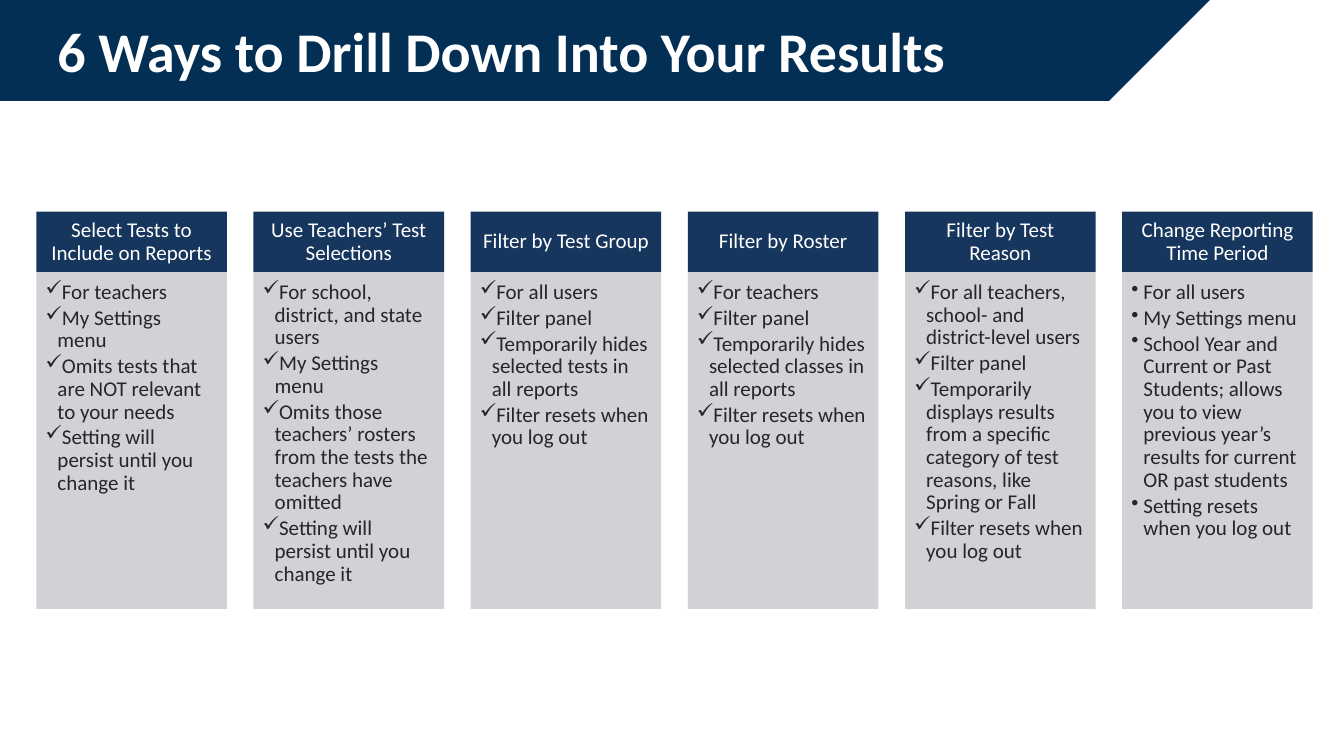
from dataclasses import dataclass

from lxml import etree
from pptx import Presentation
from pptx.dml.color import RGBColor
from pptx.enum.shapes import MSO_SHAPE
from pptx.enum.text import MSO_ANCHOR, MSO_AUTO_SIZE, PP_ALIGN
from pptx.oxml.ns import qn
from pptx.shapes.autoshape import Shape
from pptx.slide import Slide
from pptx.text.text import TextFrame
from pptx.util import Inches, Pt

RECTANGLE = MSO_SHAPE.RECTANGLE
TOP, MIDDLE = MSO_ANCHOR.TOP, MSO_ANCHOR.MIDDLE
LEFT, CENTER = PP_ALIGN.LEFT, PP_ALIGN.CENTER
NO_AUTOFIT = MSO_AUTO_SIZE.NONE
TITLE_ONLY = 5

FONT = "Calibri"
BANNER, HEADING, PANEL = "032F55", "17365D", "CCCED2"
WHITE, INK = "FFFFFF", "262626"

FIRST_LEFT, LAST_LEFT, WIDTH = 0.36, 11.13, 1.89
HEADING_TOP, HEADING_HEIGHT, PANEL_HEIGHT = 2.1, 0.6, 3.34


@dataclass(frozen=True)
class Way:
    heading: str
    points: tuple[str, ...]
    bullet: str = "✓"


WAYS = (
    Way("Select Tests to Include on Reports", (
        "For teachers",
        "My Settings menu",
        "Omits tests that are NOT relevant to your needs",
        "Setting will persist until you change it")),
    Way("Use Teachers’ Test Selections", (
        "For school, district, and state users",
        "My Settings menu",
        "Omits those teachers’ rosters from the tests the teachers have omitted",
        "Setting will persist until you change it")),
    Way("Filter by Test Group", (
        "For all users",
        "Filter panel",
        "Temporarily hides selected tests in all reports",
        "Filter resets when you log out")),
    Way("Filter by Roster", (
        "For teachers",
        "Filter panel",
        "Temporarily hides selected classes in all reports",
        "Filter resets when you log out")),
    Way("Filter by Test Reason", (
        "For all teachers, school- and district-level users",
        "Filter panel",
        "Temporarily displays results from a specific category of test reasons, "
        "like Spring or Fall",
        "Filter resets when you log out")),
    Way("Change Reporting Time Period", (
        "For all users",
        "My Settings menu",
        "School Year and Current or Past Students; allows you to view "
        "previous year’s results for current OR past students",
        "Setting resets when you log out"), "•"),
)


def color(value: str) -> RGBColor:
    return RGBColor.from_string(value)


def paint(shape: Shape, fill: str) -> None:
    shape.shadow.inherit = False
    shape.fill.solid()
    shape.fill.fore_color.rgb = color(fill)
    shape.line.fill.background()


def write(frame: TextFrame, lines: tuple[str, ...], ink: str, size: float = 15,
          align: PP_ALIGN = LEFT, bold: bool = False, after: float = 0,
          bullet: str = "") -> None:
    frame.word_wrap = True
    frame.auto_size = NO_AUTOFIT
    for index, line in enumerate(lines):
        paragraph = frame.add_paragraph() if index else frame.paragraphs[0]
        paragraph.text = line
        paragraph.alignment = align
        paragraph.line_spacing = 0.9
        paragraph.space_after = Pt(after)
        if bullet:
            paragraph.level = 1
            properties = paragraph._p.get_or_add_pPr()
            properties.set("marL", str(Inches(0.12)))
            properties.set("indent", str(-Inches(0.12)))
            etree.SubElement(properties, qn("a:buChar"), char=bullet)
        font = paragraph.font
        font.name, font.size, font.bold = FONT, Pt(size), bold
        font.color.rgb = color(ink)


def add_box(slide: Slide, left: float, top: float, height: float, fill: str,
            anchor: MSO_ANCHOR, insets: tuple[float, float, float, float]) -> Shape:
    box = slide.shapes.add_shape(
        RECTANGLE, Inches(left), Inches(top), Inches(WIDTH), Inches(height))
    paint(box, fill)
    frame = box.text_frame
    frame.vertical_anchor = anchor
    (frame.margin_left, frame.margin_top,
     frame.margin_right, frame.margin_bottom) = map(Inches, insets)
    return box


def add_way(slide: Slide, way: Way, left: float) -> None:
    heading = add_box(slide, left, HEADING_TOP, HEADING_HEIGHT, HEADING,
                      MIDDLE, (0.12, 0.07, 0.12, 0.07))
    write(heading.text_frame, (way.heading,), WHITE, align=CENTER)

    panel = add_box(slide, left, HEADING_TOP + HEADING_HEIGHT, PANEL_HEIGHT, PANEL,
                    TOP, (0.09, 0.09, 0.12, 0.13))
    fill_color = panel._element.spPr.find(qn("a:solidFill"))[0]
    etree.SubElement(fill_color, qn("a:alpha"), val="90000")
    write(panel.text_frame, way.points, INK, after=2.25, bullet=way.bullet)


def add_banner(slide: Slide) -> None:
    outline = slide.shapes.build_freeform(0, 0, scale=Inches(1))
    outline.add_line_segments([(11.66, 0), (11.1, 1.11), (0, 1.11)], close=True)
    paint(outline.convert_to_shape(), BANNER)


def add_title(slide: Slide, text: str) -> None:
    title = slide.shapes.title
    title.left, title.top = Inches(0.47), Inches(0)
    title.width, title.height = Inches(11.5), Inches(1.08)
    title.text_frame.vertical_anchor = MIDDLE
    write(title.text_frame, (text,), WHITE, size=40, bold=True)
    # Bring the title in front of the banner
    slide.shapes._spTree.append(title._element)


def main() -> None:
    deck = Presentation()
    deck.slide_width, deck.slide_height = Inches(13.33), Inches(7.5)
    slide = deck.slides.add_slide(deck.slide_layouts[TITLE_ONLY])

    # Banner and title
    add_banner(slide)
    add_title(slide, "6 Ways to Drill Down Into Your Results")

    # Six evenly spaced columns
    pitch = (LAST_LEFT - FIRST_LEFT) / (len(WAYS) - 1)
    for index, way in enumerate(WAYS):
        add_way(slide, way, FIRST_LEFT + index * pitch)

    deck.save("out.pptx")


if __name__ == "__main__":
    main()
